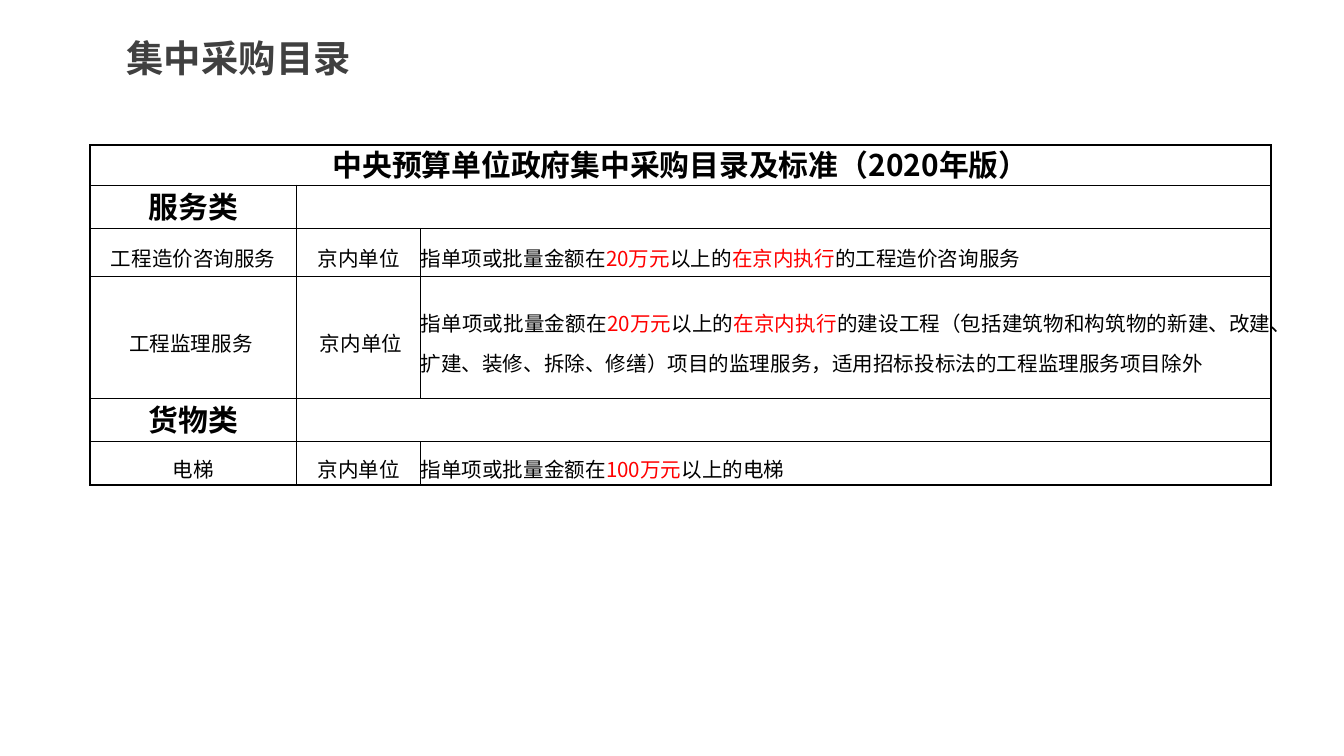
from lxml import etree
from pptx import Presentation
from pptx.dml.color import RGBColor
from pptx.enum import text
from pptx.oxml import ns
from pptx.util import Cm, Pt

FONT = "Noto Sans CJK SC"
COLORS = {"title": "404040", "body": "000000", "highlight": "FF0000"}
COLUMNS = (3.91, 2.34, 16.07)
ROW_HEIGHTS = (0.76, 0.76, 0.91, 2.31, 0.76, 0.82)
HEAVY_COLUMNS = (0, 2, 3)
HEAVY_ROWS = (0, 4, 6)
HEADING_ROWS = (0, 1, 4)
AMOUNT = "指单项或批量金额在"
PLACE = ("以上的", "在京内执行")
ROWS = (
    (("中央预算单位政府集中采购目录及标准（2020年版）",),),
    (("服务类",), ()),
    (("工程造价咨询服务",), ("京内单位",),
     (AMOUNT, "20万元", *PLACE, "的工程造价咨询服务")),
    (("工程监理服务 ",), (" 京内单位",),
     (AMOUNT, "20万元", *PLACE,
      "的建设工程（包括建筑物和构筑物的新建、改建、扩建、装修、拆除、修缮）"
      "项目的监理服务，适用招标投标法的工程监理服务项目除外")),
    (("货物类",), ()),
    (("电梯",), ("京内单位",), (AMOUNT, "100万元", "以上的电梯")),
)


def rgb(name):
    return RGBColor.from_string(COLORS[name])


def style_paragraph(p, size, bold, color, align):
    p.alignment = align
    font = p.font
    font.name, font.size, font.bold = FONT, Pt(size), bold
    font.color.rgb = rgb(color)
    latin = p._p.pPr.find(ns.qn("a:defRPr")).find(ns.qn("a:latin"))
    ea = etree.Element(ns.qn("a:ea"), typeface=FONT)
    latin.addnext(ea)


def add_title(s):
    sp = s.shapes.title
    sp.left, sp.top, sp.width, sp.height = Cm(2.39), Cm(0.56), Cm(10.92), Cm(1.07)
    tf = sp.text_frame
    tf.text = "集中采购目录"
    tf.auto_size = text.MSO_AUTO_SIZE.NONE
    tf.vertical_anchor = text.MSO_ANCHOR.MIDDLE
    tf.margin_left = tf.margin_right = 0
    style_paragraph(tf.paragraphs[0], 20, True, "title", text.PP_ALIGN.LEFT)


def set_borders(cell, row, column):
    right = column + (cell.span_width if cell.is_merge_origin else 1)
    edges = (("L", column in HEAVY_COLUMNS), ("R", right in HEAVY_COLUMNS),
             ("T", row in HEAVY_ROWS), ("B", row + 1 in HEAVY_ROWS))
    tc_pr = cell._tc.get_or_add_tcPr()
    for side, heavy in edges:
        ln = etree.SubElement(tc_pr, ns.qn(f"a:ln{side}"), w=str(Pt(1 if heavy else 0.5)))
        fill = etree.SubElement(ln, ns.qn("a:solidFill"))
        etree.SubElement(fill, ns.qn("a:srgbClr"), val=COLORS["body"])


def fill_cell(cell, parts, heading, align):
    cell.fill.background()
    cell.vertical_anchor = text.MSO_ANCHOR.MIDDLE
    cell.margin_left = cell.margin_right = cell.margin_top = cell.margin_bottom = 0
    p = cell.text_frame.paragraphs[0]
    p.line_spacing = Pt(21.5)
    style_paragraph(p, 16 if heading else 11, heading, "body", align)
    for i, part in enumerate(parts):
        r = p.add_run()
        r.text = part
        if i % 2:
            r.font.color.rgb = rgb("highlight")


def add_catalogue(s):
    frame = s.shapes.add_table(len(ROWS), len(COLUMNS), Cm(1.7), Cm(2.74),
                               Cm(sum(COLUMNS)), Cm(sum(ROW_HEIGHTS)))
    table = frame.table
    table.first_row = table.horz_banding = False
    for column, width in zip(table.columns, COLUMNS):
        column.width = Cm(width)
    for row, height in zip(table.rows, ROW_HEIGHTS):
        row.height = Cm(height)
    for i, cells in enumerate(ROWS):
        last = len(cells) - 1
        if last < 2:
            table.cell(i, last).merge(table.cell(i, 2))
        for j, parts in enumerate(cells):
            cell = table.cell(i, j)
            align = text.PP_ALIGN.JUSTIFY if j == 2 else text.PP_ALIGN.CENTER
            set_borders(cell, i, j)
            fill_cell(cell, parts, i in HEADING_ROWS, align)


def main():
    prs = Presentation()
    prs.slide_width, prs.slide_height = Cm(25.4), Cm(14.29)
    s = prs.slides.add_slide(prs.slide_layouts[5])
    add_title(s)
    add_catalogue(s)
    prs.save("out.pptx")


if __name__ == "__main__":
    main()
